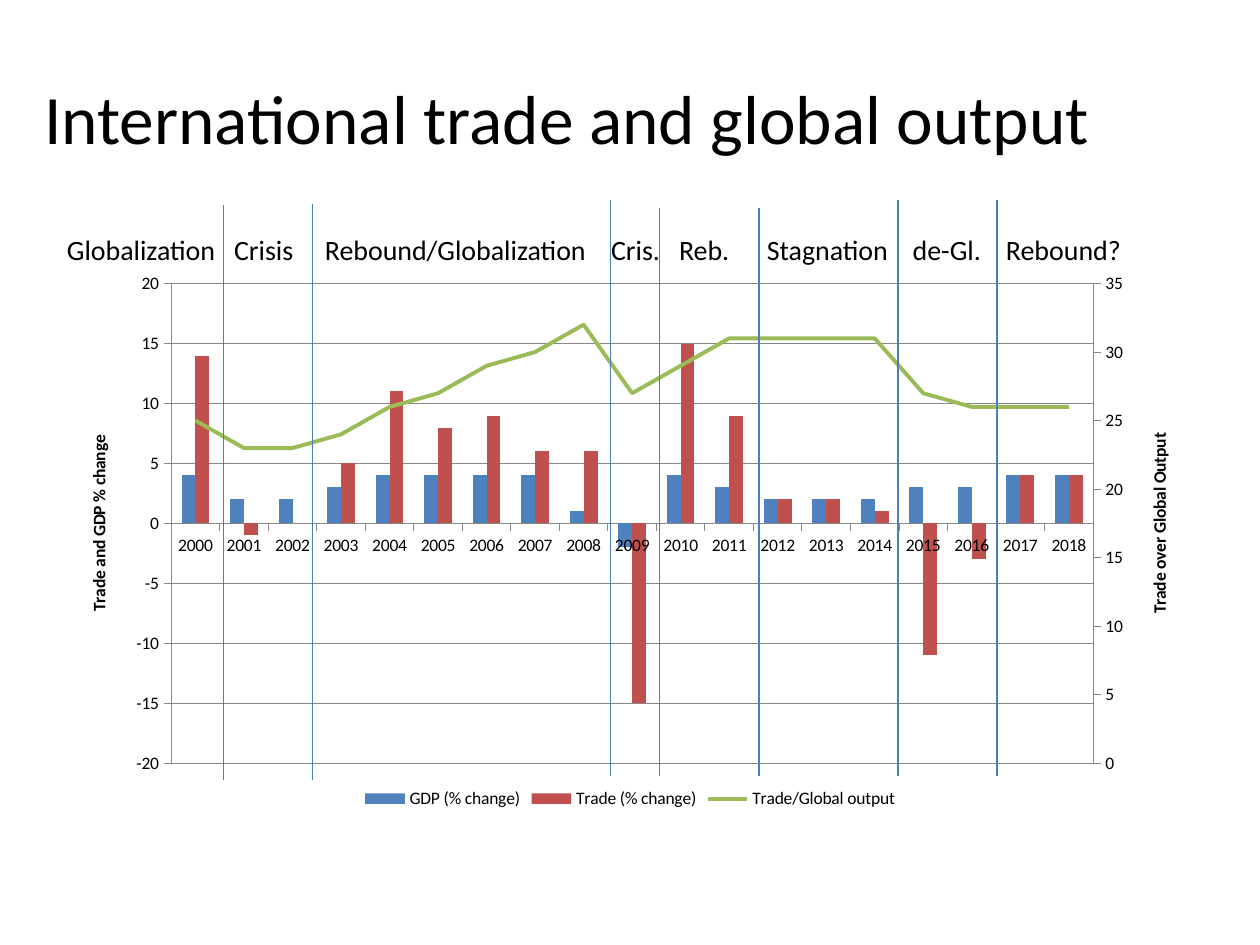
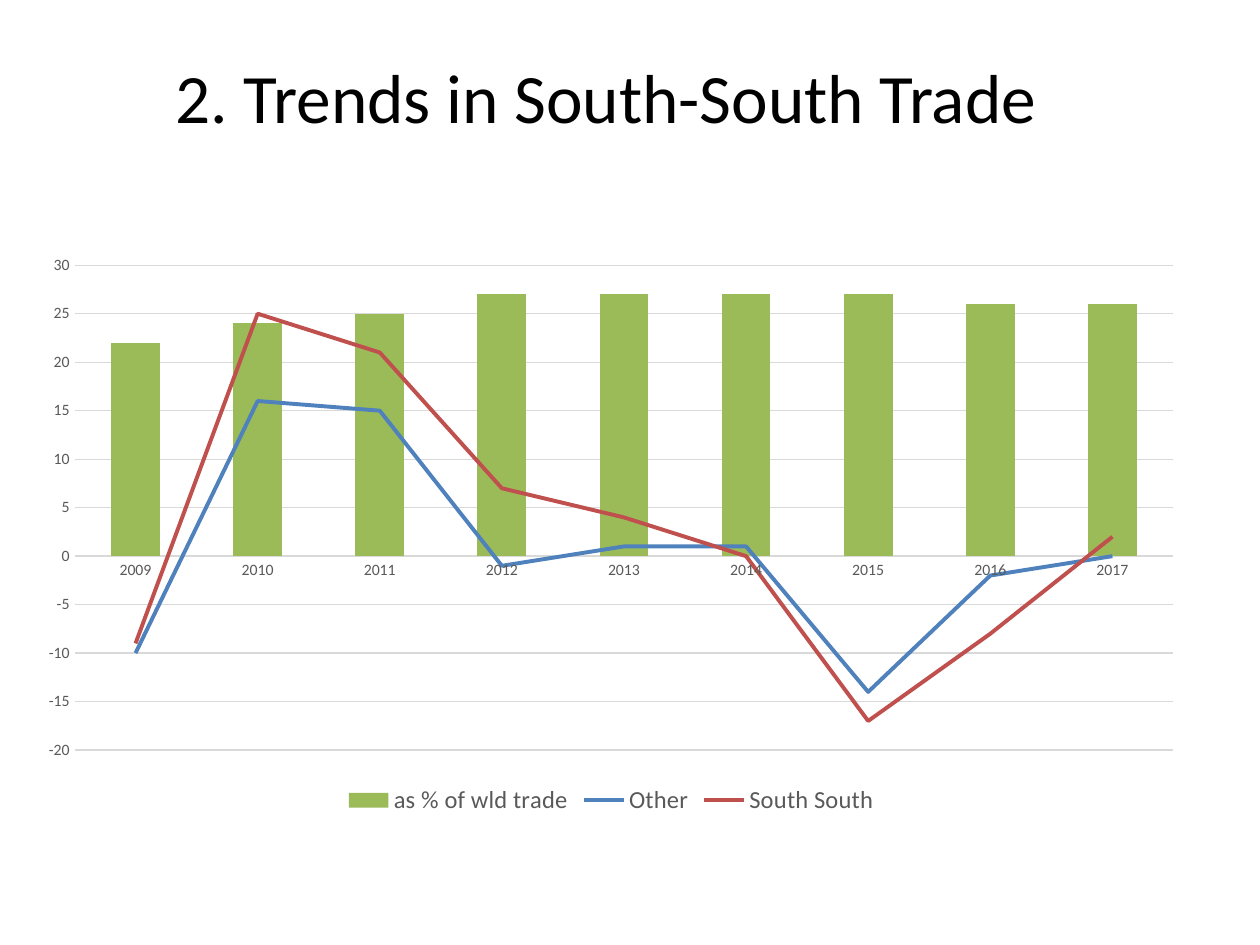
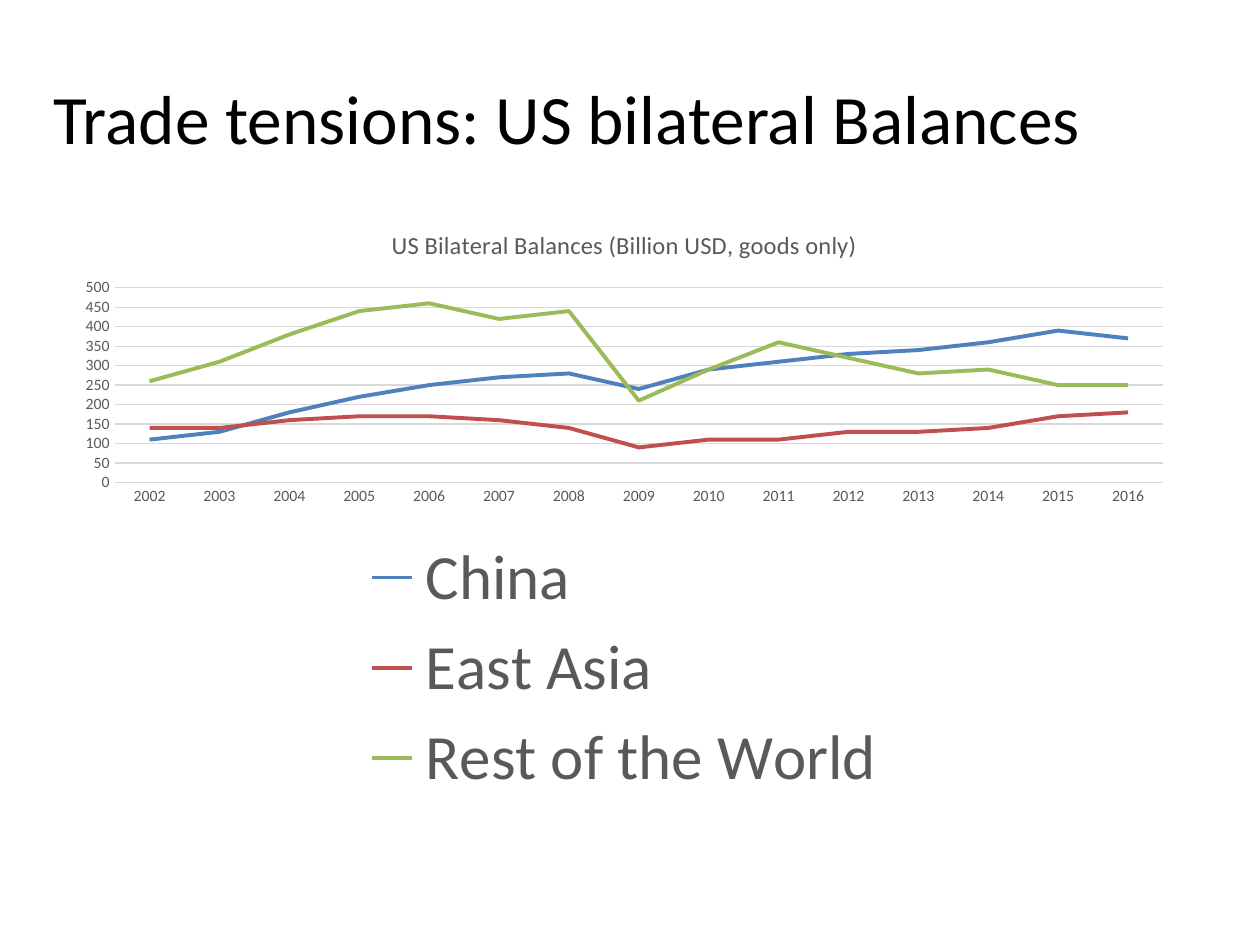
from copy import deepcopy

from pptx import Presentation
from pptx.chart.axis import CategoryAxis, ValueAxis
from pptx.chart.data import CategoryChartData
from pptx.dml.color import RGBColor
from pptx.enum.chart import XL_CHART_TYPE, XL_LEGEND_POSITION, XL_MARKER_STYLE, XL_TICK_MARK
from pptx.enum.shapes import MSO_CONNECTOR
from pptx.enum.text import MSO_ANCHOR, MSO_AUTO_SIZE, PP_ALIGN
from pptx.oxml import parse_xml
from pptx.oxml.ns import nsdecls, qn
from pptx.oxml.xmlchemy import OxmlElement
from pptx.util import Cm, Pt

COLUMN, LINE = XL_CHART_TYPE.COLUMN_CLUSTERED, XL_CHART_TYPE.LINE
BOTTOM = XL_LEGEND_POSITION.BOTTOM
NO_MARKER = XL_MARKER_STYLE.NONE
TICK_OUT, TICK_NONE = XL_TICK_MARK.OUTSIDE, XL_TICK_MARK.NONE
STRAIGHT = MSO_CONNECTOR.STRAIGHT
MIDDLE, NO_FIT = MSO_ANCHOR.MIDDLE, MSO_AUTO_SIZE.NONE
CENTER = PP_ALIGN.CENTER

FONT = "Calibri"
BLACK, GRAY, PALE, AXIS = "000000", "595959", "D9D9D9", "878787"
BLUE, RED, GREEN, RULE = "4F81BD", "C0504D", "9BBB59", "4B7EBC"


def rgb(color):
    return RGBColor.from_string(color)


def set_font(font, size, color=BLACK, bold=False):
    font.name, font.size, font.bold = FONT, Pt(size), bold
    font.color.rgb = rgb(color)


def set_line(line, color, width=0.75):
    line.color.rgb = rgb(color)
    line.width = Pt(width)


def write(tf, text, size=16, color=BLACK, bold=False, align=None):
    p = tf.paragraphs[0]
    if align is not None:
        p.alignment = align
    r = p.add_run()
    r.text = text
    set_font(r.font, size, color, bold)


def add_slide(prs, title, left=0, top=0.76, bottom_inset=0.13):
    s = prs.slides.add_slide(prs.slide_layouts[5])
    sp = s.shapes.title
    sp.left, sp.top, sp.width, sp.height = Cm(left), Cm(top), Cm(22.86), Cm(3.18)
    tf = sp.text_frame
    tf.auto_size, tf.word_wrap, tf.vertical_anchor = NO_FIT, True, MIDDLE
    tf.margin_bottom = Cm(bottom_inset)
    write(tf, title, size=39.6, align=CENTER)
    return s


def add_tabbed_text(s, box, labels, stops):
    """One line of labels, each after the first at its own tab stop."""
    tf = s.shapes.add_textbox(*map(Cm, box)).text_frame
    tf.word_wrap = True
    tabs = OxmlElement("a:tabLst")
    for stop in stops:
        tab = OxmlElement("a:tab")
        tab.set("pos", str(Cm(stop)))
        tab.set("algn", "l")
        tabs.append(tab)
    tf.paragraphs[0]._p.get_or_add_pPr().append(tabs)
    write(tf, "\t".join(labels))


def add_rule(s, x, top, bottom):
    c = s.shapes.add_connector(STRAIGHT, Cm(x), Cm(top), Cm(x), Cm(bottom))
    set_line(c.line, RULE)
    c._element.spPr.append(OxmlElement("a:effectLst"))


# Chart parts

def place_plot(area, plot):
    """Fix the inner plot area, as fractions of the chart."""
    for old in area.findall(qn("c:layout")):
        area.remove(old)
    sizes = "".join(f'<c:{tag} val="{v}"/>' for tag, v in zip("xywh", plot))
    area.insert(0, parse_xml(
        f'<c:layout {nsdecls("c")}><c:manualLayout><c:layoutTarget val="inner"/>'
        f'<c:xMode val="edge"/><c:yMode val="edge"/>{sizes}'
        '</c:manualLayout></c:layout>'))


def move_to_lines(area, columns):
    """Turn the series after the columns into a line group on the same axes."""
    bar = area.find(qn("c:barChart"))
    group = parse_xml(f'<c:lineChart {nsdecls("c")}><c:grouping val="standard"/>'
                      '<c:varyColors val="0"/></c:lineChart>')
    for ser in bar.findall(qn("c:ser"))[columns:]:
        for old in ser.findall(qn("c:invertIfNegative")):
            ser.remove(old)
        group.append(ser)
    group.append(parse_xml(f'<c:marker {nsdecls("c")} val="1"/>'))
    for ax_id in bar.findall(qn("c:axId")):
        group.append(deepcopy(ax_id))
    bar.addnext(group)
    return group


def add_right_axis(area, group):
    """Give the line group its own value axis at the right."""
    cat, val = (deepcopy(area.find(qn(tag))) for tag in ("c:catAx", "c:valAx"))
    ids = ("50010", "50020")
    for ax, own, other in ((cat, *ids), (val, *reversed(ids))):
        ax.find(qn("c:axId")).set("val", own)
        ax.find(qn("c:crossAx")).set("val", other)
    for ax_id, new in zip(group.findall(qn("c:axId")), ids):
        ax_id.set("val", new)
    val.find(qn("c:crosses")).set("val", "max")
    val.find(qn("c:axPos")).set("val", "r")
    area.find(qn("c:valAx")).addnext(val)
    val.addnext(cat)
    CategoryAxis(cat).visible = False
    axis = ValueAxis(val)
    axis.has_major_gridlines = False
    return axis


def style_axis(axis, line, size, color, tick):
    set_font(axis.tick_labels.font, size, color)
    axis.major_tick_mark, axis.minor_tick_mark = tick, TICK_NONE
    if line:
        set_line(axis.format.line, line, 0.5)
    else:
        axis.format.line.fill.background()


def scale_axis(axis, low, high, step):
    axis.minimum_scale, axis.maximum_scale, axis.major_unit = low, high, step


def title_axis(axis, text):
    write(axis.axis_title.text_frame, text, size=10, bold=True)
    body = axis._element.xpath("./c:title//a:bodyPr")[0]
    body.set("rot", "-5400000")
    body.set("vert", "horz")


def add_chart(s, box, years, series, plot, scale, columns=0, legend_size=14,
              text_color=GRAY, size=9, cat_line=PALE, val_line=None, grid=PALE,
              grid_width=0.75, tick=TICK_NONE, title=None, axis_title=None,
              right=None):
    """Series are (name, colour, values); the first `columns` are bars."""
    data = CategoryChartData()
    data.categories = [str(y) for y in years]
    for name, _, values in series:
        data.add_series(name, values)
    kind = COLUMN if columns else LINE
    chart = s.shapes.add_chart(kind, *map(Cm, box), data).chart
    set_font(chart.font, 10)
    area = chart._chartSpace.xpath(".//c:plotArea")[0]
    place_plot(area, plot)

    # Title and legend
    chart.has_title = title is not None
    if title:
        write(chart.chart_title.text_frame, title, size=14, color=GRAY)
    chart.has_legend = True
    chart.legend.position, chart.legend.include_in_layout = BOTTOM, False
    set_font(chart.legend.font, legend_size, text_color)

    # Axes
    val = chart.value_axis
    style_axis(chart.category_axis, cat_line, size, text_color, tick)
    style_axis(val, val_line, size, text_color, tick)
    scale_axis(val, *scale)
    set_line(val.major_gridlines.format.line, grid, grid_width)
    if columns:
        group = move_to_lines(area, columns)
        if right:
            right_title, right_scale = right
            axis = add_right_axis(area, group)
            scale_axis(axis, *right_scale)
            title_axis(axis, right_title)
    if axis_title:
        title_axis(val, axis_title)

    # Series
    plots = list(chart.plots)
    for group in plots:
        group.vary_by_categories = False
    if columns:
        plots[0].gap_width = 150
        for ser, (_, color, _) in zip(plots[0].series, series):
            ser.format.fill.solid()
            ser.format.fill.fore_color.rgb = rgb(color)
            ser.invert_if_negative = False
    for ser, (_, color, _) in zip(plots[-1].series, series[columns:]):
        set_line(ser.format.line, color, 2.25)
        ser.marker.style = NO_MARKER
        ser.smooth = False


# Slides

def global_output(prs):
    s = add_slide(prs, "International trade and global output")
    add_tabbed_text(s, (1.1, 4.56, 23.04, 0.94),
                    ["Globalization", "Crisis", "Rebound/Globalization", "Cris.",
                     "Reb.", "Stagnation", "de-Gl.", "Rebound?"],
                    [3.37, 5.2, 10.97, 12.34, 14.11, 17.05, 18.93])
    add_chart(
        s, (1.69, 5.33, 22.02, 11.07), range(2000, 2019),
        [("GDP (% change)", BLUE,
          [4, 2, 2, 3, 4, 4, 4, 4, 1, -2, 4, 3, 2, 2, 2, 3, 3, 4, 4]),
         ("Trade (% change)", RED,
          [14, -1, 0, 5, 11, 8, 9, 6, 6, -15, 15, 9, 2, 2, 1, -11, -3, 4, 4]),
         ("Trade/Global output", GREEN,
          [25, 23, 23, 24, 26, 27, 29, 30, 32, 27, 29, 31, 31, 31, 31, 27, 26,
           26, 26])],
        plot=(0.08, 0.035, 0.844, 0.874), scale=(-20, 20, 5), columns=2,
        legend_size=10, text_color=BLACK, size=10, cat_line=AXIS, val_line=AXIS,
        grid=AXIS, grid_width=0.5, tick=TICK_OUT,
        axis_title="Trade and GDP % change",
        right=("Trade over Global Output", (0, 35, 5)))
    # Borders between the periods
    for x, top, bottom in [(4.5, 4.14, 15.72), (6.3, 4.11, 15.72),
                           (12.3, 4.04, 15.65), (13.3, 4.19, 15.65),
                           (15.3, 4.19, 15.65), (18.1, 4.04, 15.65),
                           (20.1, 4.04, 15.65)]:
        add_rule(s, x, top, bottom)


def south_south(prs):
    s = add_slide(prs, "2. Trends in South-South Trade", 0.79, 0.94, bottom_inset=1.32)
    add_chart(
        s, (0.51, 4.93, 23.62, 11.61), range(2009, 2018),
        [("as % of wld trade", GREEN, [22, 24, 25, 27, 27, 27, 27, 26, 26]),
         ("Other", BLUE, [-10, 16, 15, -1, 1, 1, -14, -2, 0]),
         ("South South", RED, [-9, 25, 21, 7, 4, 0, -17, -8, 2])],
        plot=(0.042, 0.036, 0.938, 0.842), scale=(-20, 30, 5), columns=1)


def bilateral_balances(prs):
    s = add_slide(prs, "Trade tensions: US bilateral Balances")
    add_chart(
        s, (1.27, 4.12, 22.63, 12.19), range(2002, 2017),
        [("China", BLUE, [110, 130, 180, 220, 250, 270, 280, 240, 290, 310, 330,
                          340, 360, 390, 370]),
         ("East Asia", RED, [140, 140, 160, 170, 170, 160, 140, 90, 110, 110,
                             130, 130, 140, 170, 180]),
         ("Rest of the World", GREEN, [260, 310, 380, 440, 460, 420, 440, 210,
                                       290, 360, 320, 280, 290, 250, 250])],
        plot=(0.046, 0.138, 0.934, 0.322), scale=(0, 500, 50), legend_size=36,
        title="US Bilateral Balances (Billion USD, goods only)")


def main():
    prs = Presentation()
    prs.slide_width, prs.slide_height = Cm(25.4), Cm(19.05)
    global_output(prs)
    south_south(prs)
    bilateral_balances(prs)
    prs.save("out.pptx")


if __name__ == "__main__":
    main()
